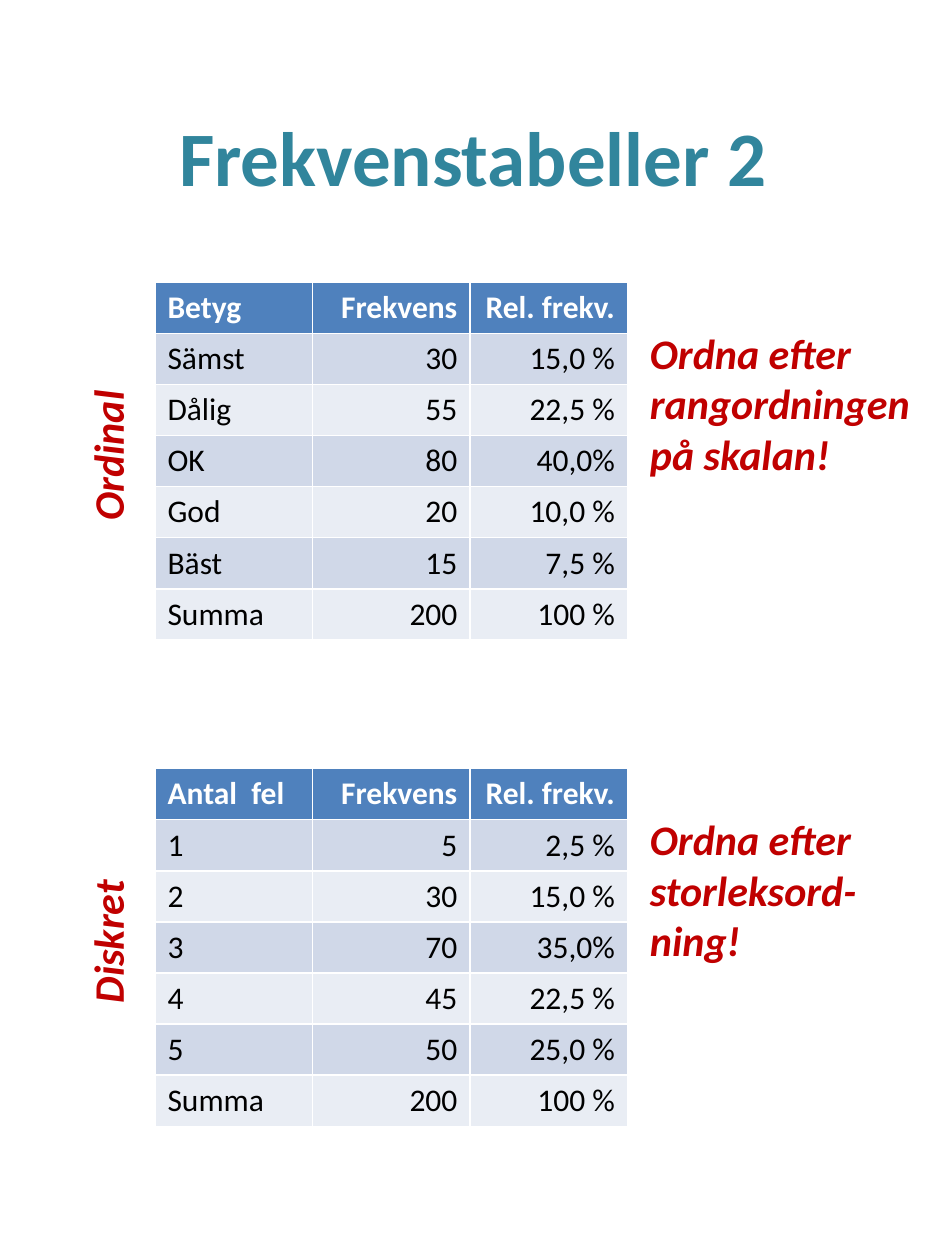
from pptx import Presentation
from pptx.dml.color import RGBColor
from pptx.enum.text import MSO_ANCHOR, PP_ALIGN
from pptx.util import Inches, Pt

HUES = {"title": "31859C", "note": "C00000", "head": "4F81BD",
        "odd": "D0D8E8", "even": "E9EDF4", "light": "FFFFFF", "dark": "000000"}
FONT = "Calibri"
TITLE = "Frekvenstabeller 2"
PARTS = [
    {"label": "Ordinal", "note": "Ordna efter rangordningen på skalan!",
     "rows": [("Betyg", "Frekvens", "Rel. frekv."),
              ("Sämst", "30", "15,0 %"),
              ("Dålig", "55", "22,5 %"),
              ("OK", "80", "40,0%"),
              ("God", "20", "10,0 %"),
              ("Bäst", "15", "7,5 %"),
              ("Summa", "200", "100 %")]},
    {"label": "Diskret", "note": "Ordna efter storleksord-ning!",
     "rows": [("Antal  fel", "Frekvens", "Rel. frekv."),
              ("1", "5", "2,5 %"),
              ("2", "30", "15,0 %"),
              ("3", "70", "35,0%"),
              ("4", "45", "22,5 %"),
              ("5", "50", "25,0 %"),
              ("Summa", "200", "100 %")]},
]
LEFT, TOP, STEP = 1.23, 2.24, 3.86
COL, ROW = 1.25, 2.84 / 7


def write(frame, text, size, hue, align=PP_ALIGN.LEFT, bold=True, slant=False):
    para = frame.paragraphs[0]
    para.alignment = align
    run = para.add_run()
    run.text = text
    font = run.font
    font.name, font.size = FONT, Pt(size)
    font.bold, font.italic = bold, slant
    font.color.rgb = RGBColor.from_string(HUES[hue])


def add_text(slide, area, text, size, hue, align=PP_ALIGN.LEFT, slant=False,
             anchor=MSO_ANCHOR.TOP, turn=0):
    box = slide.shapes.add_textbox(*map(Inches, area))
    box.rotation = turn
    frame = box.text_frame
    frame.word_wrap = True
    frame.vertical_anchor = anchor
    write(frame, text, size, hue, align, slant=slant)


def add_grid(slide, rows, top):
    wide, high = len(rows[0]), len(rows)
    grid = slide.shapes.add_table(high, wide, Inches(LEFT), Inches(top),
                                  Inches(COL * wide), Inches(ROW * high)).table
    for r, row in enumerate(rows):
        fill = "head" if r == 0 else "odd" if r % 2 else "even"
        for c, text in enumerate(row):
            cell = grid.cell(r, c)
            cell.fill.solid()
            cell.fill.fore_color.rgb = RGBColor.from_string(HUES[fill])
            cell.vertical_anchor = MSO_ANCHOR.MIDDLE
            write(cell.text_frame, text, 18, "dark" if r else "light",
                  PP_ALIGN.RIGHT if c else PP_ALIGN.LEFT, bold=r == 0)


def main():
    deck = Presentation()
    deck.slide_width, deck.slide_height = Inches(7.5), Inches(10)
    slide = deck.slides.add_slide(deck.slide_layouts[6])
    add_text(slide, (0.38, 0.4, 6.75, 1.67), TITLE, 44, "title",
             PP_ALIGN.CENTER, anchor=MSO_ANCHOR.MIDDLE)
    for n, part in enumerate(PARTS):
        top = TOP + n * STEP
        add_grid(slide, part["rows"], top)
        add_text(slide, (5.06, top + 0.31, 2.31, 1.34), part["note"], 24,
                 "note", slant=True)
        add_text(slide, (-0.11, top + 1.1, 1.97, 0.55), part["label"], 24,
                 "note", PP_ALIGN.CENTER, slant=True, turn=270)
    deck.save("out.pptx")


if __name__ == "__main__":
    main()
